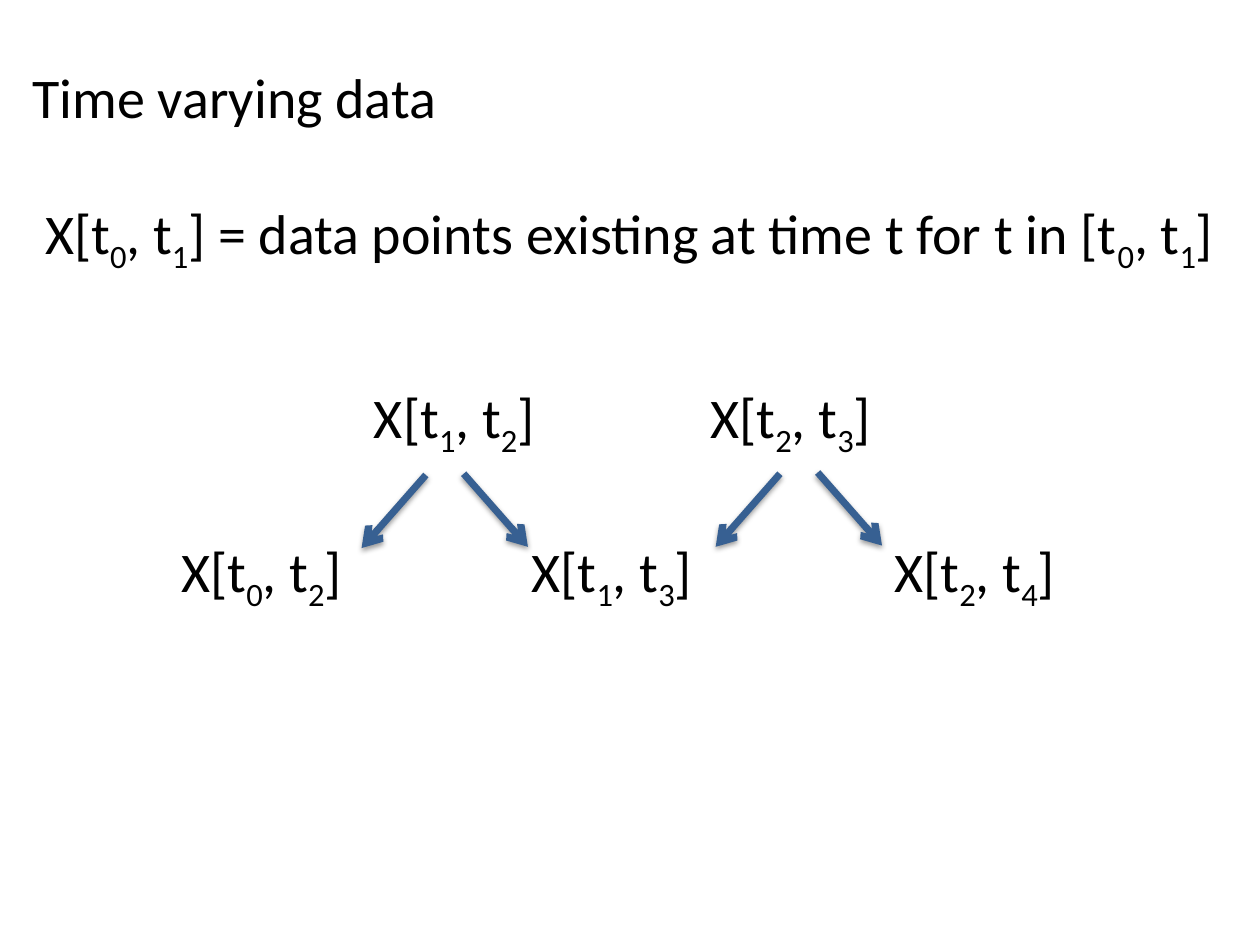
from lxml import etree
from pptx import Presentation
from pptx.dml.color import RGBColor
from pptx.enum.shapes import MSO_CONNECTOR
from pptx.oxml.ns import qn
from pptx.util import Inches, Pt

STRAIGHT = MSO_CONNECTOR.STRAIGHT

# Content: "_" makes the next character a subscript, a tab moves to the next stop
TEXT_BOXES = [
    {"box": (0.16, 0.45, 9.84, 1.72), "stops": [], "lines": [
        {"text": "Time varying data"},
        {"text": "X[t_0, t_1] = data points existing at time t for t in [t_0, t_1]",
         "indent": 0.1, "space_before": 39}]},
    {"box": (2.87, 2.99, 4.46, 0.64), "stops": [2.67],
     "lines": [{"text": "X[t_1, t_2]\tX[t_2, t_3]"}]},
    {"box": (1.34, 4.21, 7.32, 0.64), "stops": [2.78, 5.66],
     "lines": [{"text": "X[t_0, t_2]\tX[t_1, t_3]\tX[t_2, t_4]"}]},
]
TEXT_FONT = {"name": "Calibri", "size": Pt(32)}
TEXT_COLOR, ARROW_COLOR, SHADOW_COLOR = "000000", "376092", "000000"

# Each pair of arrows spreads evenly from a centre: (centre x, top y)
ARROW_PAIRS = [(3.53, 3.77), (6.34, 3.76)]
START_SPREAD, END_SPREAD, DROP = 0.15, 0.66, 0.58


def color(value):
    return RGBColor.from_string(value)


def add_element(parent, tag, **attributes):
    element = etree.SubElement(parent, qn(tag))
    for name, value in attributes.items():
        element.set(name, str(value))
    return element


def add_run(paragraph, text, subscript=False):
    if not text:
        return
    run = paragraph.add_run()
    run.text = text
    for name, value in TEXT_FONT.items():
        setattr(run.font, name, value)
    run.font.color.rgb = color(TEXT_COLOR)
    if subscript:
        run._r.get_or_add_rPr().set("baseline", "-25000")


def add_text(slide, box, stops, lines):
    frame = slide.shapes.add_textbox(*map(Inches, box)).text_frame
    frame.word_wrap = True
    for index, line in enumerate(lines):
        paragraph = frame.add_paragraph() if index else frame.paragraphs[0]
        paragraph.space_before = Pt(line.get("space_before", 0))
        properties = paragraph._p.get_or_add_pPr()
        properties.set("marL", str(Inches(line.get("indent", 0))))
        if stops:
            tabs = add_element(properties, "a:tabLst")
            for stop in stops:
                add_element(tabs, "a:tab", pos=Inches(stop), algn="l")
        first, *rest = line["text"].split("_")
        add_run(paragraph, first)
        for piece in rest:
            add_run(paragraph, piece[0], subscript=True)
            add_run(paragraph, piece[1:])


def add_arrow(slide, *ends):
    arrow = slide.shapes.add_connector(STRAIGHT, *map(Inches, ends))
    arrow.line.color.rgb = color(ARROW_COLOR)
    arrow.line.width = Pt(4)
    add_element(arrow.line._get_or_add_ln(), "a:tailEnd", type="arrow")
    # Soft shadow straight below
    effects = add_element(arrow._element.spPr, "a:effectLst")
    shadow = add_element(effects, "a:outerShdw", blurRad=Pt(3.1), dist=Pt(1.6),
                         dir=90 * 60000, rotWithShape=0)
    tint = add_element(shadow, "a:srgbClr", val=SHADOW_COLOR)
    add_element(tint, "a:alpha", val=38000)


def main():
    presentation = Presentation()
    presentation.slide_width, presentation.slide_height = Inches(10), Inches(7.5)
    slide = presentation.slides.add_slide(presentation.slide_layouts[6])

    for text_box in TEXT_BOXES:
        add_text(slide, **text_box)

    for center, top in ARROW_PAIRS:
        for side in (-1, 1):
            # The right arrow of a pair sits slightly higher
            start = top - 0.01 * (side > 0)
            add_arrow(slide, center + side * START_SPREAD, start,
                      center + side * END_SPREAD, start + DROP)

    presentation.save("out.pptx")


if __name__ == "__main__":
    main()
